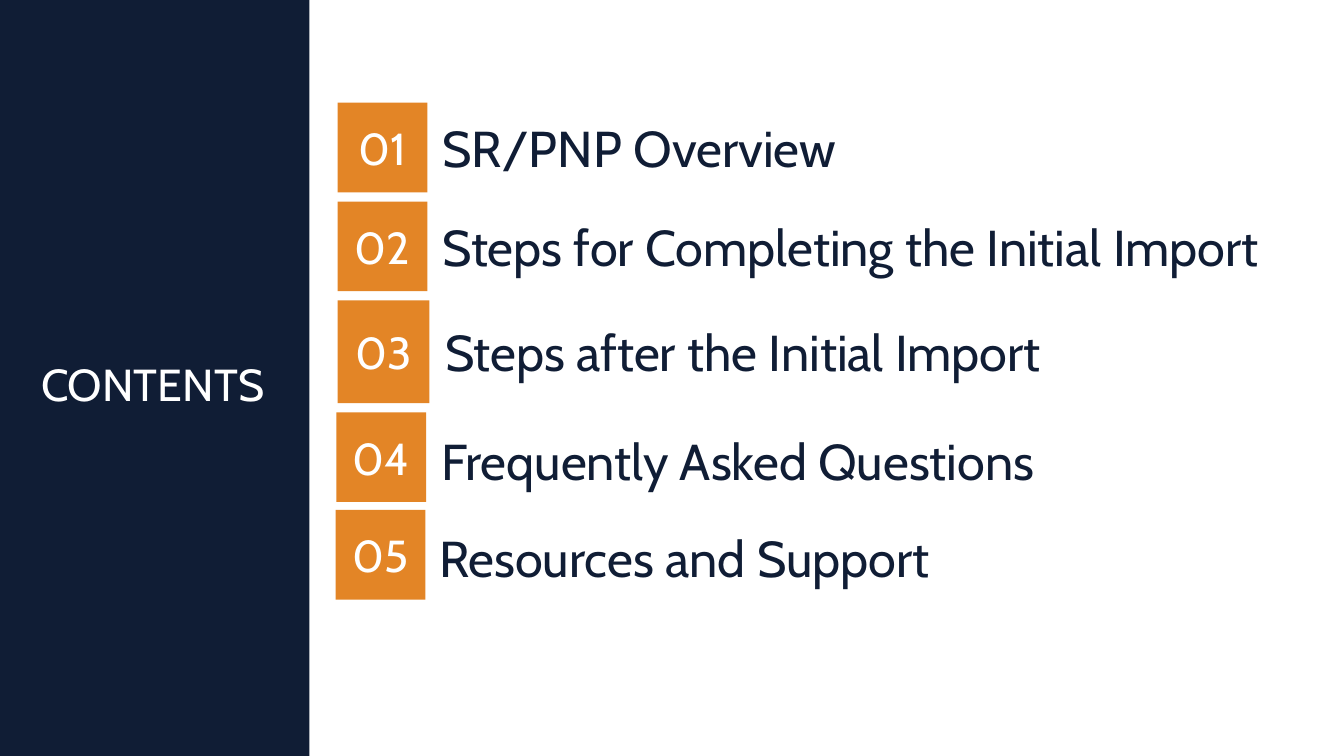
from pptx import Presentation
from pptx.dml.color import RGBColor
from pptx.enum.shapes import MSO_SHAPE
from pptx.enum.text import MSO_ANCHOR, PP_ALIGN
from pptx.util import Cm, Pt

RECT = MSO_SHAPE.RECTANGLE
MIDDLE, TOP = MSO_ANCHOR.MIDDLE, MSO_ANCHOR.TOP
LEFT, CENTER = PP_ALIGN.LEFT, PP_ALIGN.CENTER
COLORS = {"navy": "101D35", "orange": "E38526", "white": "FFFFFF"}
FONT = "Cabin"

# title, tile left, top, width, height, label left, label width, label drop
TOPICS = [
    ("SR/PNP Overview", 8.51, 2.59, 2.26, 2.26, 10.9, 22.17, 0),
    ("Steps for Completing the Initial Import", 8.51, 5.08, 2.26, 2.26, 10.9, 22.17, 0),
    ("Steps after the Initial Import", 8.51, 7.57, 2.31, 2.59, 10.97, 22.9, 0),
    ("Frequently Asked Questions", 8.48, 10.39, 2.26, 2.26, 10.87, 22.17, 0.15),
    ("Resources and Support", 8.46, 12.85, 2.26, 2.26, 10.82, 22.17, 0.15),
]


def color(name):
    return RGBColor.from_string(COLORS[name])


def write(shape, text, size, tint, align, anchor):
    frame = shape.text_frame
    frame.word_wrap = True
    frame.vertical_anchor = anchor
    line = frame.paragraphs[0]
    line.text = text
    line.alignment = align
    line.font.name = FONT
    line.font.size = Pt(size)
    line.font.color.rgb = color(tint)


def block(slide, x, y, w, h, fill):
    shape = slide.shapes.add_shape(RECT, Cm(x), Cm(y), Cm(w), Cm(h))
    shape.shadow.inherit = False
    shape.fill.solid()
    shape.fill.fore_color.rgb = color(fill)
    shape.line.fill.background()
    return shape


def label(slide, x, y, w, h, text, size, tint, align=LEFT, anchor=MIDDLE):
    box = slide.shapes.add_textbox(Cm(x), Cm(y), Cm(w), Cm(h))
    write(box, text, size, tint, align, anchor)


def topic(slide, number, title, x, y, w, h, start, span, drop):
    tile = block(slide, x, y, w, h, "orange")
    write(tile, f"{number:02}", 32, "white", CENTER, MIDDLE)
    label(slide, start, y + drop, span, h - drop, title, 36, "navy")


def main():
    deck = Presentation()
    deck.slide_width, deck.slide_height = Cm(33.87), Cm(19.05)
    slide = deck.slides.add_slide(deck.slide_layouts[6])
    block(slide, 0, 0, 7.8, 19.05, "navy")
    label(slide, 0, 8.86, 7.7, 1.63, "CONTENTS", 32, "white", CENTER, TOP)
    for number, row in enumerate(TOPICS, 1):
        topic(slide, number, *row)
    deck.save("out.pptx")


if __name__ == "__main__":
    main()
